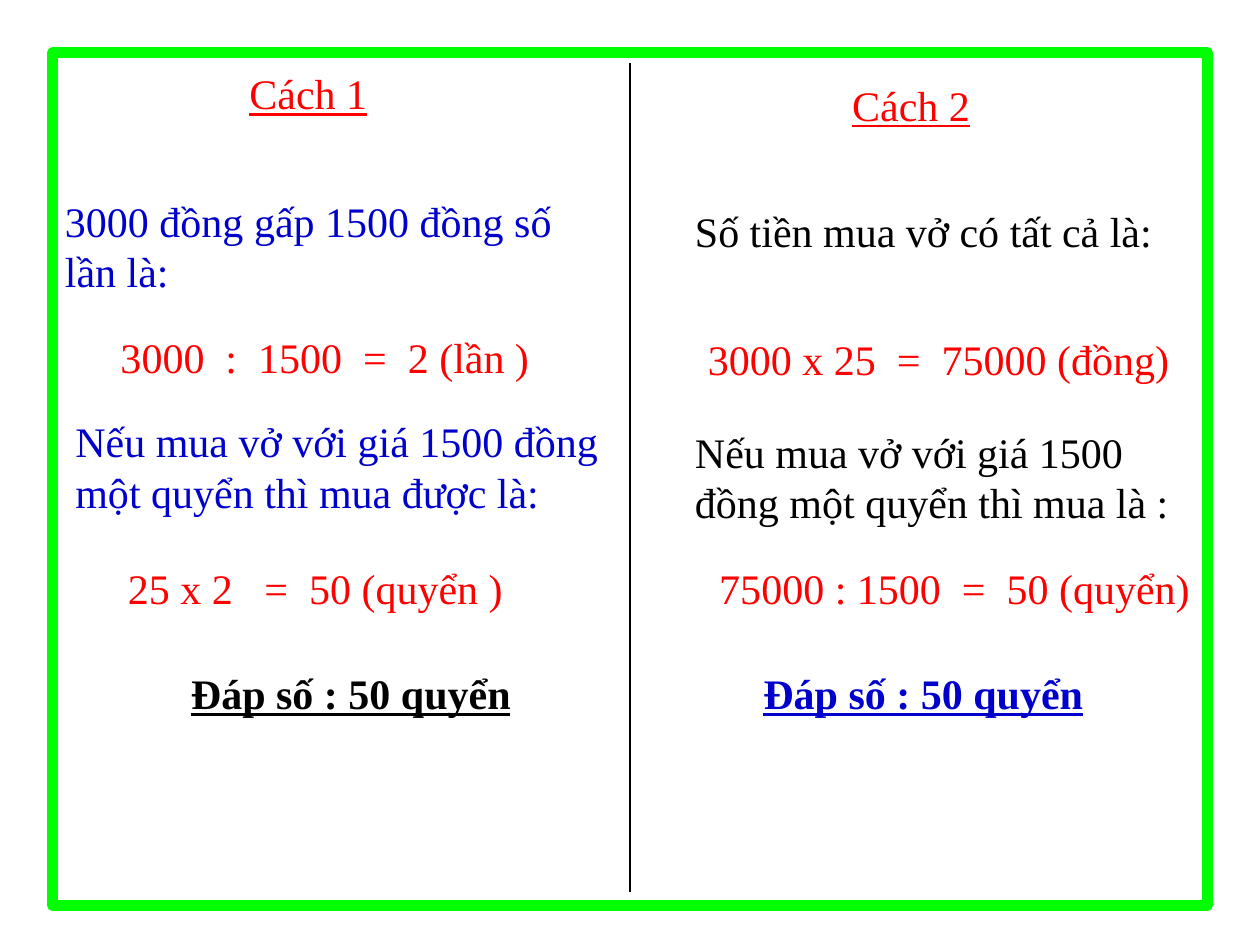
from lxml import etree
from pptx import Presentation
from pptx import util as u
from pptx.dml.color import RGBColor
from pptx.enum import shapes, text
from pptx.oxml import ns


def color(value):
    return RGBColor.from_string(value)


RED, BLUE, BLACK, GREEN = "FF0000", "0000CC", "000000", "00FF00"
HEADING = {"underline": True}
ANSWER = {"bold": True, "underline": True}
ONE_LINE, TWO_LINES = 1.3, 2.31

presentation = Presentation()
presentation.slide_width = u.Cm(25.4)
presentation.slide_height = u.Cm(19.05)
slide = presentation.slides.add_slide(presentation.slide_layouts[6])

first_method = [
    ("Cách 1", 4.78, 1.24, 16.18, ONE_LINE, RED, HEADING, True),
    ("3000 đồng gấp 1500 đồng số lần là:", 1.06, 3.81, 10.36, TWO_LINES, BLUE, {}, True),
    ("3000  :  1500  =  2 (lần )", 2.18, 6.56, 8.84, ONE_LINE, RED, {}, False),
    ("Nếu mua vở với giá 1500 đồng một quyển thì mua được là:", 1.27, 8.26, 11.22, TWO_LINES, BLUE, {}, True),
    ("25 x 2   =  50 (quyển )", 2.33, 11.22, 10.8, ONE_LINE, RED, {}, True),
    ("Đáp số : 50 quyển", 3.6, 13.34, 9.1, ONE_LINE, BLACK, ANSWER, True),
]
second_method = [
    ("Cách 2", 16.93, 1.48, 5.93, ONE_LINE, RED, HEADING, True),
    ("Số tiền mua vở có tất cả là:", 13.76, 4.02, 11.64, ONE_LINE, BLACK, {}, True),
    ("3000 x 25  =  75000 (đồng)", 14.02, 6.6, 9.9, ONE_LINE, RED, {}, False),
    ("Nếu mua vở với giá 1500 đồng một quyển thì mua là :", 13.76, 8.47, 11, TWO_LINES, BLACK, {}, True),
    ("75000 : 1500  =  50 (quyển)", 14.25, 11.22, 10.08, ONE_LINE, RED, {}, False),
    ("Đáp số : 50 quyển", 15.14, 13.34, 9.42, ONE_LINE, BLUE, ANSWER, True),
]

for wording, left, top, width, height, ink, extra, wrap in first_method + second_method:
    box = slide.shapes.add_textbox(u.Cm(left), u.Cm(top), u.Cm(width), u.Cm(height))
    frame = box.text_frame
    frame.word_wrap = wrap
    frame.auto_size = text.MSO_AUTO_SIZE.SHAPE_TO_FIT_TEXT
    run = frame.paragraphs[0].add_run()
    run.text = wording
    run.font.color.rgb = color(ink)
    for name, value in {"name": "Times New Roman", "size": u.Pt(24), **extra}.items():
        setattr(run.font, name, value)

divider = slide.shapes.add_connector(
    shapes.MSO_CONNECTOR.STRAIGHT, u.Cm(12.7), u.Cm(1.27), u.Cm(12.7), u.Cm(17.98)
)
divider.line.color.rgb = color(BLACK)
divider.line.width = u.Pt(0.75)
etree.SubElement(divider.element.spPr, ns.qn("a:effectLst"))

border = slide.shapes.add_shape(
    shapes.MSO_SHAPE.RECTANGLE, u.Cm(1.06), u.Cm(1.06), u.Cm(23.28), u.Cm(17.2)
)
border.shadow.inherit = False
border.fill.background()
border.line.color.rgb = color(GREEN)
border.line.width = u.Pt(6)

presentation.save("out.pptx")
